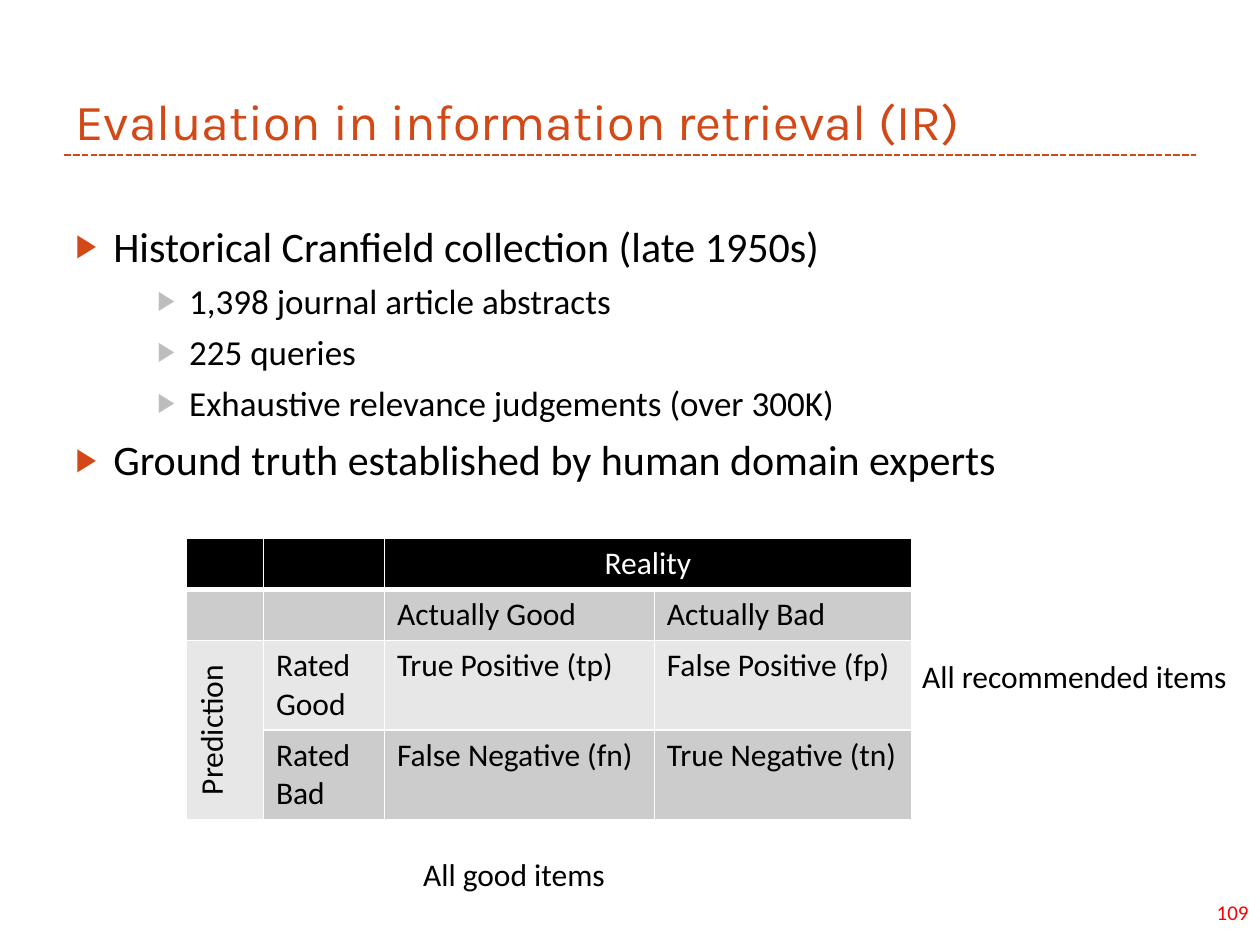
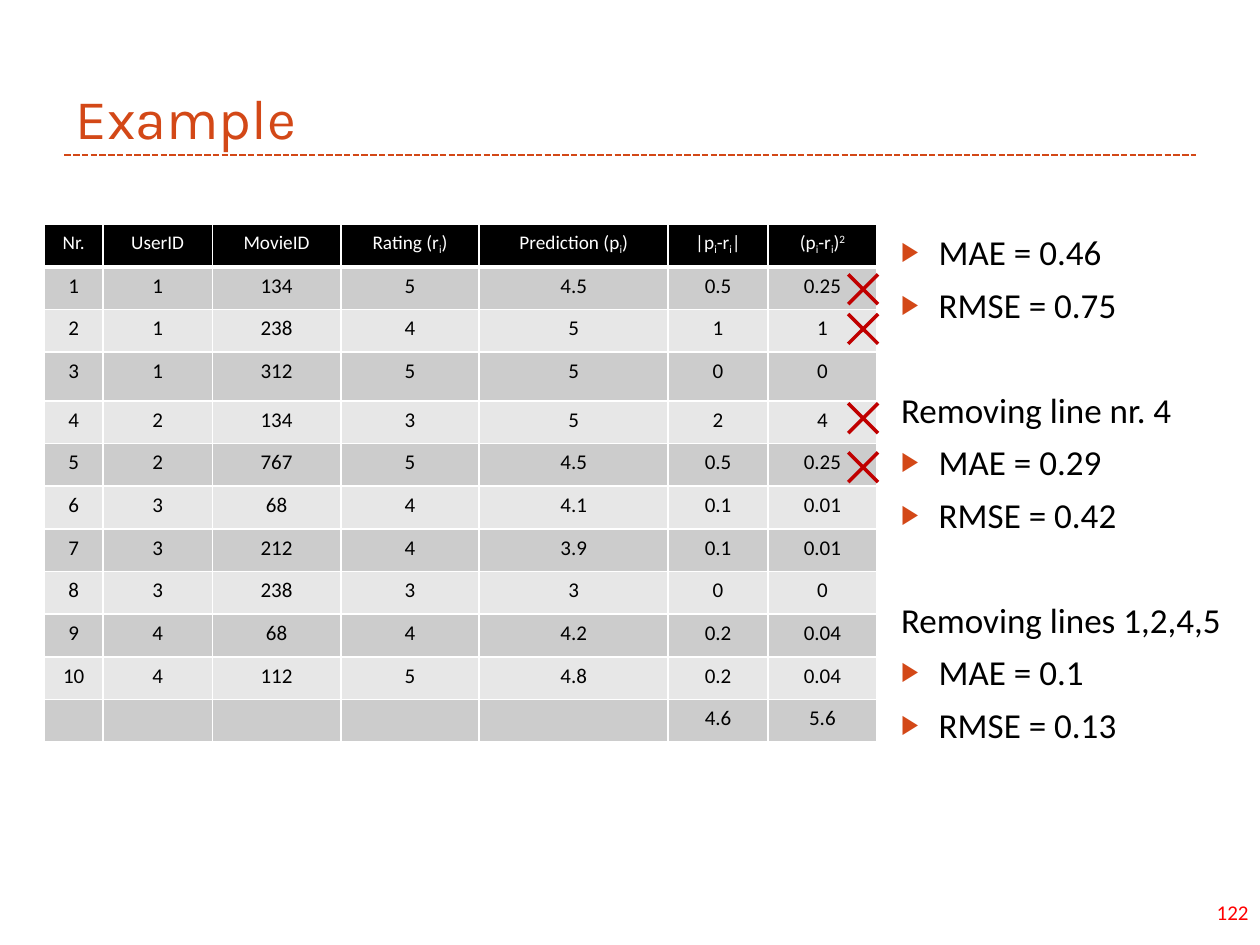
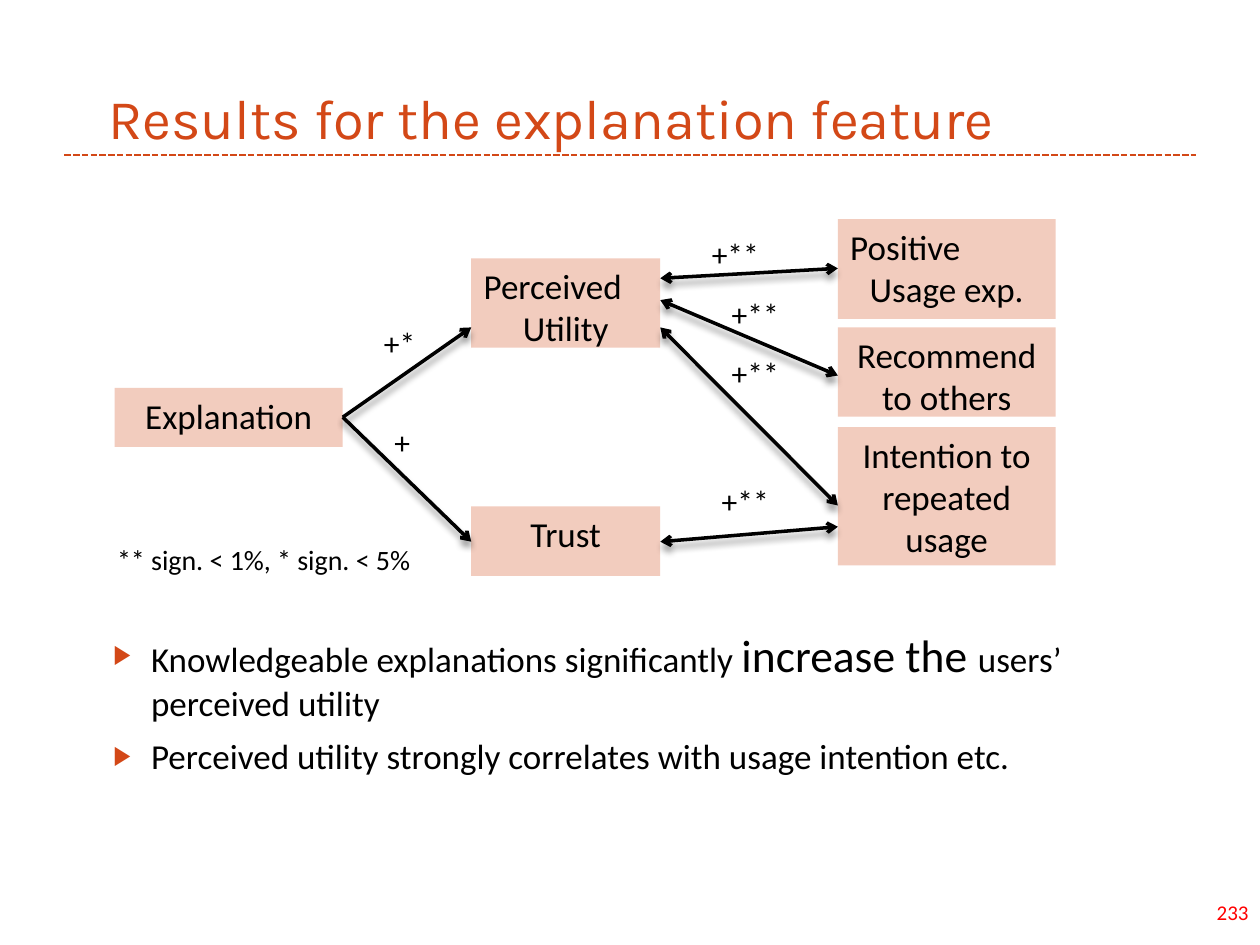
from lxml import etree
from pptx import Presentation
from pptx.dml.color import RGBColor
from pptx.enum.dml import MSO_LINE
from pptx.enum.shapes import MSO_CONNECTOR, MSO_SHAPE
from pptx.enum.text import MSO_ANCHOR, MSO_AUTO_SIZE, PP_ALIGN
from pptx.oxml.ns import qn
from pptx.util import Cm, Pt

COLORS = {
    "accent": "D34817", "black": "000000", "white": "FFFFFF", "number": "FF0000",
    "cross": "C00000", "sub": "BDBDBD", "band": "CCCCCC", "light": "E7E7E7",
}
LEFT, CENTER, RIGHT = PP_ALIGN.LEFT, PP_ALIGN.CENTER, PP_ALIGN.RIGHT


def write(frame, text, size=18, color="black", font="Calibri", align=LEFT,
          before=0, level=0, bullet=None, indent=None, shift=0, same=False):
    """Add text as a new paragraph, or as a further span of the last one."""
    para = frame.paragraphs[-1]
    if para.runs and not same:
        para = frame.add_paragraph()
        para.space_before = Pt(before)
    if not same:
        para.alignment, para.level = align, level
    if indent:
        props = para._p.get_or_add_pPr()
        props.set("marL", str(Cm(indent[0])))
        props.set("indent", str(-Cm(indent[1])))
        if bullet:
            tint = etree.SubElement(props, qn("a:buClr"))
            etree.SubElement(tint, qn("a:srgbClr"), val=COLORS[bullet])
            etree.SubElement(props, qn("a:buSzPct"), val="76000")
            etree.SubElement(props, qn("a:buChar"), char="▶")
        else:
            etree.SubElement(props, qn("a:buNone"))
    if not text:
        etree.SubElement(para._p, qn("a:endParaRPr"), sz=str(size * 100))
        return
    span = para.add_run()
    span.text = text
    span.font.size, span.font.name, span.font.bold = Pt(size), font, False
    span.font.color.rgb = RGBColor.from_string(COLORS[color])
    if shift:
        span._r.get_or_add_rPr().set("baseline", str(shift))


def draw_line(shapes, ends, color, width, dash=None, arrows=(), shadow=False):
    line = shapes.add_connector(MSO_CONNECTOR.STRAIGHT, *(Cm(n) for n in ends))
    line.line.color.rgb = RGBColor.from_string(COLORS[color])
    line.line.width = Pt(width)
    if dash:
        line.line.dash_style = dash
    for end in arrows:
        etree.SubElement(line.line._get_or_add_ln(), qn(f"a:{end}"), type="arrow")
    effects = etree.SubElement(line._element.spPr, qn("a:effectLst"))
    if shadow:
        outer = etree.SubElement(effects, qn("a:outerShdw"), blurRad="50800",
                                 dist="43000", dir="5400000", rotWithShape="0")
        shade = etree.SubElement(outer, qn("a:srgbClr"), val=COLORS["black"])
        etree.SubElement(shade, qn("a:alpha"), val="40000")


deck = Presentation()
deck.slide_width, deck.slide_height = Cm(25.4), Cm(19.05)

# List styles
main = dict(size=24, before=6, bullet="accent", indent=(0.76, 0.76))
sub = dict(size=20, before=5, level=2, bullet="sub", indent=(2.29, 0.64))
item = dict(main, size=20)
heading = dict(item, bullet=None, before=36)

# Titles and lists: title, title size, title place, number, body place, list
outline = [
    ("Evaluation in information retrieval (IR)", 28.8, (1.27, 0.43, 22.86, 2.74),
     "109", (1.27, 4.32, 22.86, 13.72), [
         ("Historical Cranfield collection (late 1950s)", main),
         ("1,398 journal article abstracts", sub),
         ("225 queries", sub),
         ("Exhaustive relevance judgements (over 300K)", sub),
         ("Ground truth established by human domain experts", main)]),
    ("Example", 32, (1.27, 0.43, 22.86, 2.74),
     "122", (17.91, 4.52, 7.49, 11.99), [
         ("MAE = 0.46", item), ("RMSE = 0.75", item),
         ("Removing line nr. 4", heading),
         ("MAE = 0.29", item), ("RMSE = 0.42", item),
         ("Removing lines 1,2,4,5", heading),
         ("MAE = 0.1", item), ("RMSE = 0.13", item)]),
    ("Results for the explanation feature", 32, (1.93, 0, 20.8, 3.17),
     "233", (2.03, 12.52, 21.59, 3.61), [
         ("Knowledgeable explanations significantly ", item),
         ("increase the ", dict(size=26, same=True)),
         ("users’ perceived utility", dict(size=20, same=True)),
         ("Perceived utility strongly correlates with usage intention etc.", item)]),
]
pages = []
labels = []
for title, title_size, title_place, number, body_place, lines in outline:
    page = deck.slides.add_slide(deck.slide_layouts[1])
    pages.append(page)
    draw_line(page.shapes, (1.3, 3.12, 24.1, 3.12), "accent", 1.25,
              dash=MSO_LINE.SQUARE_DOT)
    labels.append((page, (22.17, 18.01, 3.25, 0.76), number, True,
                   dict(size=12, color="number", align=RIGHT)))
    title_line = (title, dict(size=title_size, color="accent", font="Karla"))
    for holder, place, anchor, texts in (
            (page.shapes.title, title_place, MSO_ANCHOR.BOTTOM, [title_line]),
            (page.placeholders[1], body_place, MSO_ANCHOR.TOP, lines)):
        holder.left, holder.top, holder.width, holder.height = map(Cm, place)
        frame = holder.text_frame
        frame.word_wrap, frame.auto_size = True, MSO_AUTO_SIZE.NONE
        frame.vertical_anchor = anchor
        for text, style in texts:
            write(frame, text, **style)
retrieval, example, results = pages

# Tables; text between ~ marks is raised or lowered
confusion = [
    ("", "", "Reality", ""),
    ("", "", "Actually Good", "Actually Bad"),
    ("Prediction", "Rated Good", "True Positive (tp)", "False Positive (fp)"),
    ("", "Rated Bad", "False Negative (fn)", "True Negative (tn)"),
]
ratings = [
    ("Nr.", "UserID", "MovieID", "Rating (r~i~)", "Prediction (p~i~)",
     "|p~i~-r~i~|", "(p~i~-r~i~)~2"),
    ("1", "1", "134", "5", "4.5", "0.5", "0.25"),
    ("2", "1", "238", "4", "5", "1", "1"),
    ("3", "1", "312", "5", "5", "0", "0"),
    ("4", "2", "134", "3", "5", "2", "4"),
    ("5", "2", "767", "5", "4.5", "0.5", "0.25"),
    ("6", "3", "68", "4", "4.1", "0.1", "0.01"),
    ("7", "3", "212", "4", "3.9", "0.1", "0.01"),
    ("8", "3", "238", "3", "3", "0", "0"),
    ("9", "4", "68", "4", "4.2", "0.2", "0.04"),
    ("10", "4", "112", "5", "4.8", "0.2", "0.04"),
    ("", "", "", "", "", "4.6", "5.6"),
]
tables = []
for page, corner, widths, heights, rows, head_size, size, align in (
        (retrieval, (3.76, 10.85), (1.55, 2.44, 5.44, 5.18),
         (1.02, 1.02, 1.8, 1.8), confusion, 18, 18, LEFT),
        (example, (0.89, 4.52), (1.19, 2.2, 2.59, 2.79, 3.81, 2.01, 2.2),
         [0.86] * 3 + [0.98] + [0.86] * 8, ratings, 11, 12, CENTER)):
    table = page.shapes.add_table(
        len(rows), len(widths), Cm(corner[0]), Cm(corner[1]),
        Cm(sum(widths)), Cm(sum(heights))).table
    tables.append(table)
    for column, width in zip(table.columns, widths):
        column.width = Cm(width)
    for r, row in enumerate(rows):
        table.rows[r].height = Cm(heights[r])
        for c, label in enumerate(row):
            cell = table.cell(r, c)
            for side in "LRTB":
                thick = 3 if r == 0 and side == "B" else 1
                edge = etree.SubElement(cell._tc.get_or_add_tcPr(),
                                        qn(f"a:ln{side}"), w=str(Pt(thick)))
                paint = etree.SubElement(edge, qn("a:solidFill"))
                etree.SubElement(paint, qn("a:srgbClr"), val=COLORS["white"])
            fill = "black" if r == 0 else ("light", "band")[r % 2]
            cell.fill.solid()
            cell.fill.fore_color.rgb = RGBColor.from_string(COLORS[fill])
            for n, piece in enumerate(label.split("~")):
                shift = (-25000 if piece == "i" else 30000) if n % 2 else 0
                write(cell.text_frame, piece, same=n > 0, shift=shift,
                      size=size if r else head_size,
                      color="black" if r else "white",
                      align=align if r else CENTER)

# Merged cells of the confusion table
matrix = tables[0]
matrix.cell(0, 2).merge(matrix.cell(0, 3))
side_head = matrix.cell(2, 0)
side_head.merge(matrix.cell(3, 0))
side_head._tc.get_or_add_tcPr().set("vert", "vert270")
side_head.text_frame.paragraphs[0].alignment = CENTER
for r, c in ((2, 0), (3, 0)):
    matrix.cell(r, c).fill.fore_color.rgb = RGBColor.from_string(COLORS["light"])

# Crosses beside the removed rows
middle, reach = 17.4, 0.3
for level in (5.83, 6.63, 8.43, 9.42):
    cross = example.shapes.add_group_shape()
    for rise in (reach, -reach):
        draw_line(cross.shapes, (middle - reach, level + rise,
                                 middle + reach, level - rise), "cross", 2)

# Boxes of the explanation model
for place, texts in (
        ((2.31, 7.82, 4.6, 1.19), [("Explanation", CENTER)]),
        ((9.5, 10.21, 3.81, 1.4), [("Trust", CENTER)]),
        ((9.5, 5.21, 3.81, 1.8), [("Perceived", LEFT), ("Utility", CENTER)]),
        ((16.89, 4.42, 4.39, 2.01), [("Positive", LEFT), ("Usage exp.", CENTER)]),
        ((16.89, 6.6, 4.39, 1.8), [("Recommend to others", CENTER)]),
        ((16.89, 8.61, 4.39, 2.79), [("Intention to repeated usage", CENTER)])):
    box = results.shapes.add_shape(MSO_SHAPE.RECTANGLE, *map(Cm, place))
    box.shadow.inherit = False
    box.line.fill.background()
    box.fill.solid()
    box.fill.fore_color.rgb = RGBColor.from_string(COLORS["accent"])
    tint = box._element.spPr.find(".//" + qn("a:srgbClr"))
    etree.SubElement(tint, qn("a:alpha"), val="28000")
    box.text_frame.word_wrap = True
    box.text_frame.vertical_anchor = MSO_ANCHOR.TOP
    for text, align in texts:
        write(box.text_frame, text, size=20, align=align)

# Arrows of the explanation model
one_way, two_way = ("tailEnd",), ("headEnd", "tailEnd")
for ends, arrows in (
        ((6.91, 8.41, 9.5, 6.6), one_way),
        ((6.91, 8.41, 9.5, 10.92), one_way),
        ((13.31, 6.6, 16.89, 10.19), two_way),
        ((13.31, 6.05, 16.89, 7.57), two_way),
        ((13.31, 5.61, 16.89, 5.41), two_way),
        ((13.31, 10.92, 16.89, 10.62), two_way)):
    draw_line(results.shapes, ends, "black", 2, arrows=arrows, shadow=True)

# Labels: page, place, text, wrap, style
labels += [
    (retrieval, (18.34, 13.13, 6.83, 1.02), "All recommended items", False, {}),
    (retrieval, (8.28, 17.12, 4.27, 1.02), "All good items", False, {}),
    (results, (2.11, 10.82, 6.58, 0.94), "** sign. < 1%, * sign. < 5%", False,
     dict(size=16)),
]
for left, top, sign in ((7.49, 6.4, "+*"), (14.1, 4.62, "+**"), (14.5, 5.82, "+**"),
                        (14.5, 7.01, "+**"), (14.3, 9.6, "+**"), (7.7, 8.41, "+")):
    labels.append((results, (left, top, 1.6, 1.02), sign, True, {}))
for page, place, text, wrap, style in labels:
    box = page.shapes.add_textbox(*map(Cm, place))
    box.text_frame.word_wrap = wrap
    write(box.text_frame, text, **style)

deck.save("out.pptx")
